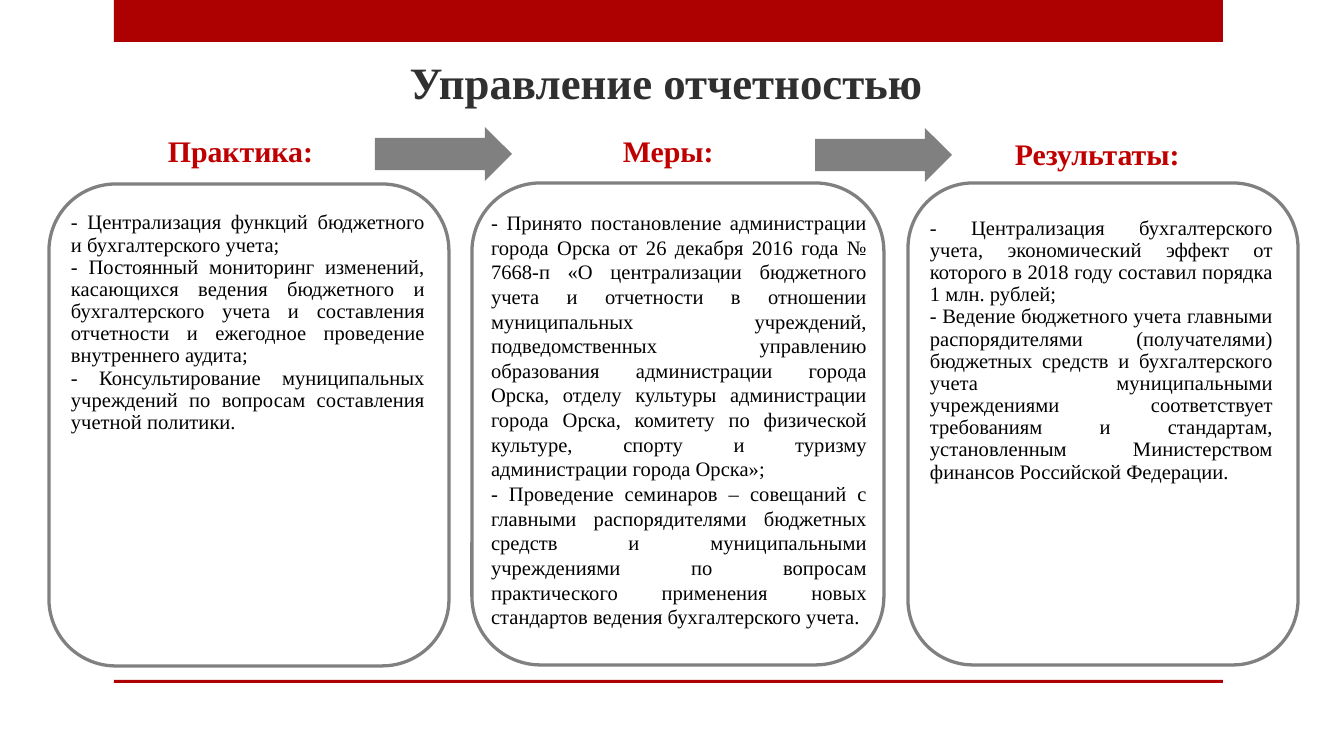
import pptx
import pptx.util
import pptx.dml.color
import pptx.enum.shapes
import pptx.enum.text

SCALE = 914400 / 134.4
FONT = "Times New Roman"
COLORS = {
    "band": "AD0101",
    "title": "303030",
    "heading": "C00000",
    "body": "000000",
    "gray": "808080",
}
SHAPES = pptx.enum.shapes.MSO_SHAPE
ALIGN = pptx.enum.text.PP_ALIGN
ANCHOR = pptx.enum.text.MSO_ANCHOR

COLUMNS = [
    {
        "heading": "Практика:",
        "heading_at": (153, 122, 216, 50),
        "frame_at": (49, 184, 400, 482),
        "text_at": (58, 169, 380, 308),
        "spacing": 0.9,
        "items": [
            "- Централизация функций бюджетного и бухгалтерского учета;",
            "- Постоянный мониторинг изменений, касающихся ведения бюджетного и бухгалтерского учета и составления отчетности и ежегодное проведение внутреннего аудита;",
            "- Консультирование муниципальных учреждений по вопросам составления учетной политики.",
        ],
    },
    {
        "heading": "Меры:",
        "heading_at": (608, 122, 216, 50),
        "frame_at": (472, 183, 412, 482),
        "text_at": (478, 207, 402, 425),
        "spacing": 1.0,
        "items": [
            "- Принято постановление администрации города Орска от 26 декабря 2016 года № 7668-п «О централизации бюджетного учета и отчетности в отношении муниципальных учреждений, подведомственных управлению образования администрации города Орска, отделу культуры администрации города Орска, комитету по физической культуре, спорту и туризму администрации города Орска»;",
            "- Проведение семинаров – совещаний с главными распорядителями бюджетных средств и муниципальными учреждениями по вопросам практического применения новых стандартов ведения бухгалтерского учета.",
        ],
    },
    {
        "heading": "Результаты:",
        "heading_at": (1000, 125, 216, 50),
        "frame_at": (908, 183, 390, 482),
        "text_at": (917, 231, 369, 239),
        "spacing": 0.9,
        "items": [
            "- Централизация бухгалтерского учета, экономический эффект от которого в 2018 году составил порядка 1 млн. рублей;",
            "- Ведение бюджетного учета главными распорядителями (получателями) бюджетных средств и бухгалтерского учета муниципальными учреждениями соответствует требованиям и стандартам, установленным Министерством финансов Российской Федерации.",
        ],
    },
]
ARROWS = [(375, 127, 137, 54), (815, 128, 137, 54)]


def px(length):
    return pptx.util.Emu(round(length * SCALE))


def color(name):
    return pptx.dml.color.RGBColor.from_string(COLORS[name])


def add_filled(page, kind, at, fill):
    shape = page.shapes.add_shape(kind, *map(px, at))
    shape.shadow.inherit = False
    shape.fill.solid()
    shape.fill.fore_color.rgb = color(fill)
    shape.line.fill.background()
    return shape


def add_arrow(page, at):
    arrow = add_filled(page, SHAPES.RIGHT_ARROW, at, "gray")
    arrow.adjustments[0] = 0.6
    arrow.adjustments[1] = 0.5


def add_frame(page, at):
    frame = page.shapes.add_shape(SHAPES.ROUNDED_RECTANGLE, *map(px, at))
    frame.shadow.inherit = False
    frame.fill.background()
    frame.line.color.rgb = color("gray")
    frame.line.width = pptx.util.Pt(1.75)


def add_text(page, at, lines, size, ink, bold=False, align=ALIGN.LEFT,
             anchor=ANCHOR.MIDDLE, spacing=1.0, insets=(13, 7, 13, 7)):
    box = page.shapes.add_textbox(*map(px, at))
    frame = box.text_frame
    frame.word_wrap = True
    frame.vertical_anchor = anchor
    frame.margin_left, frame.margin_top, frame.margin_right, frame.margin_bottom = map(px, insets)
    frame.text = "\n".join(lines)
    for para in frame.paragraphs:
        para.alignment = align
        para.line_spacing = spacing
        for span in para.runs:
            span.font.name = FONT
            span.font.size = pptx.util.Pt(size)
            span.font.bold = bold
            span.font.color.rgb = color(ink)


def add_column(page, column):
    add_frame(page, column["frame_at"])
    add_text(page, column["heading_at"], [column["heading"]], 16, "heading", bold=True,
             anchor=ANCHOR.TOP, spacing=0.9, insets=(15, 15, 15, 8))
    add_text(page, column["text_at"], column["items"], 11, "body",
             align=ALIGN.JUSTIFY, spacing=column["spacing"])


def main():
    deck = pptx.Presentation()
    deck.slide_width, deck.slide_height = px(1344), px(756)
    page = deck.slides.add_slide(deck.slide_layouts[6])
    add_filled(page, SHAPES.RECTANGLE, (114, 0, 1109, 42), "band")
    add_filled(page, SHAPES.RECTANGLE, (114, 680, 1109, 3), "band")
    add_text(page, (101, 29, 1101, 106), ["Управление отчетностью"], 24, "title",
             bold=True, align=ALIGN.CENTER, insets=(42, 7, 13, 7))
    for column in COLUMNS:
        add_column(page, column)
    for at in ARROWS:
        add_arrow(page, at)
    deck.save("out.pptx")


if __name__ == "__main__":
    main()
